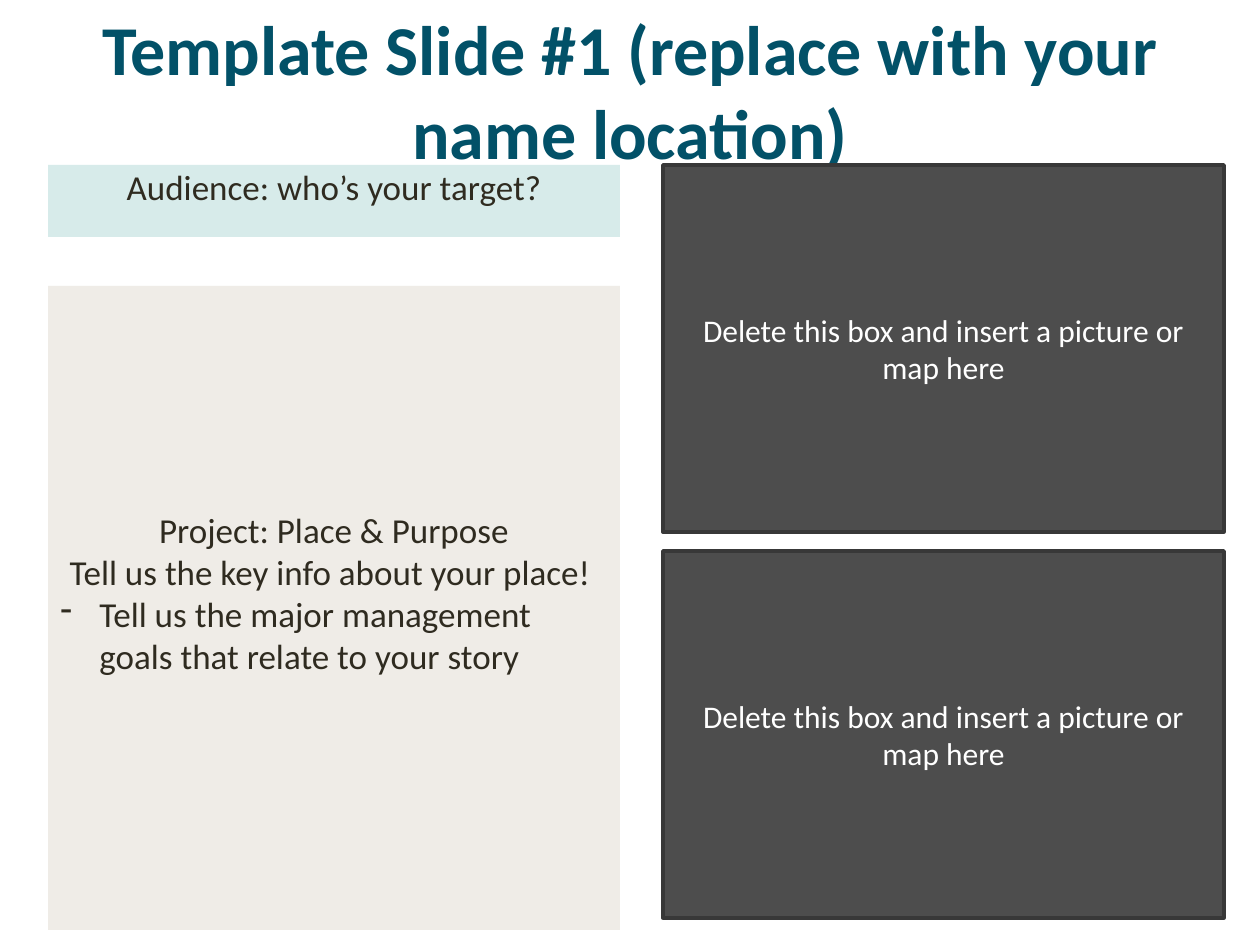
import pptx
import pptx.util
import pptx.dml.color
import pptx.enum.shapes
import pptx.enum.text
import pptx.oxml.ns
import lxml.etree

SCALE = 914400 // 126
COLORS = {
    "title": "025168", "ink": "2F2B20", "light": "FFFFFF",
    "mint": "D7EBEA", "sand": "EFECE7", "dark": "4D4D4D", "edge": "383838",
}
ALIGN = pptx.enum.text.PP_ALIGN
ANCHOR = pptx.enum.text.MSO_ANCHOR


def px(n):
    return pptx.util.Emu(n * SCALE)


def tint(name):
    return pptx.dml.color.RGBColor.from_string(COLORS[name])


def apply(item, values):
    for key, value in values.items():
        setattr(item, key, value)


def write(shape, lines, size, color, bold=False, **frame):
    text = shape.text_frame
    apply(text, {"word_wrap": True, "vertical_anchor": ANCHOR.MIDDLE, **frame})
    for i, line in enumerate(lines):
        para = text.add_paragraph() if i else text.paragraphs[0]
        para.alignment = ALIGN.CENTER
        run = para.add_run()
        run.text = line
        apply(run.font, {"name": "Calibri", "size": pptx.util.Pt(size), "bold": bold})
        run.font.color.rgb = tint(color)
    return text


def dash(para, indent, color):
    para.alignment = ALIGN.LEFT
    props = para._p.get_or_add_pPr()
    props.set("marL", str(px(indent)))
    props.set("indent", str(-px(indent)))
    qn = pptx.oxml.ns.qn
    paint = lxml.etree.SubElement(props, qn("a:buClr"))
    lxml.etree.SubElement(paint, qn("a:srgbClr"), val=COLORS[color])
    lxml.etree.SubElement(props, qn("a:buChar"), char="-")


def panel(slide, left, top, width, height, fill, edge=None):
    kind = pptx.enum.shapes.MSO_SHAPE.RECTANGLE
    box = slide.shapes.add_shape(kind, px(left), px(top), px(width), px(height))
    box.shadow.inherit = False
    box.fill.solid()
    box.fill.fore_color.rgb = tint(fill)
    if edge:
        box.line.color.rgb = tint(edge)
        box.line.width = pptx.util.Pt(2.08)
    else:
        box.line.fill.background()
    return box


def main():
    deck = pptx.Presentation()
    apply(deck, {"slide_width": px(1260), "slide_height": px(945)})
    slide = deck.slides.add_slide(deck.slide_layouts[6])

    title = slide.shapes.add_textbox(px(0), px(32), px(1260), px(116))
    write(title, ["Template Slide #1 (replace with your name location)"], 40, "title", True)

    project = panel(slide, 48, 286, 572, 644, "sand")
    lines = [
        "Project: Place & Purpose",
        "Tell us the key info about your place! ",
        "Tell us the major management goals that relate to your story",
    ]
    text = write(project, lines, 20, "ink", margin_bottom=px(38))
    dash(text.paragraphs[-1], 39, "ink")

    target = panel(slide, 48, 165, 572, 72, "mint")
    write(target, ["Audience: who’s your target?"], 20, "ink",
          vertical_anchor=ANCHOR.TOP, margin_top=0)

    for top in (165, 551):
        photo = panel(slide, 663, top, 561, 367, "dark", "edge")
        write(photo, ["Delete this box and insert a picture or map here"], 18, "light")

    deck.save("out.pptx")


if __name__ == "__main__":
    main()
